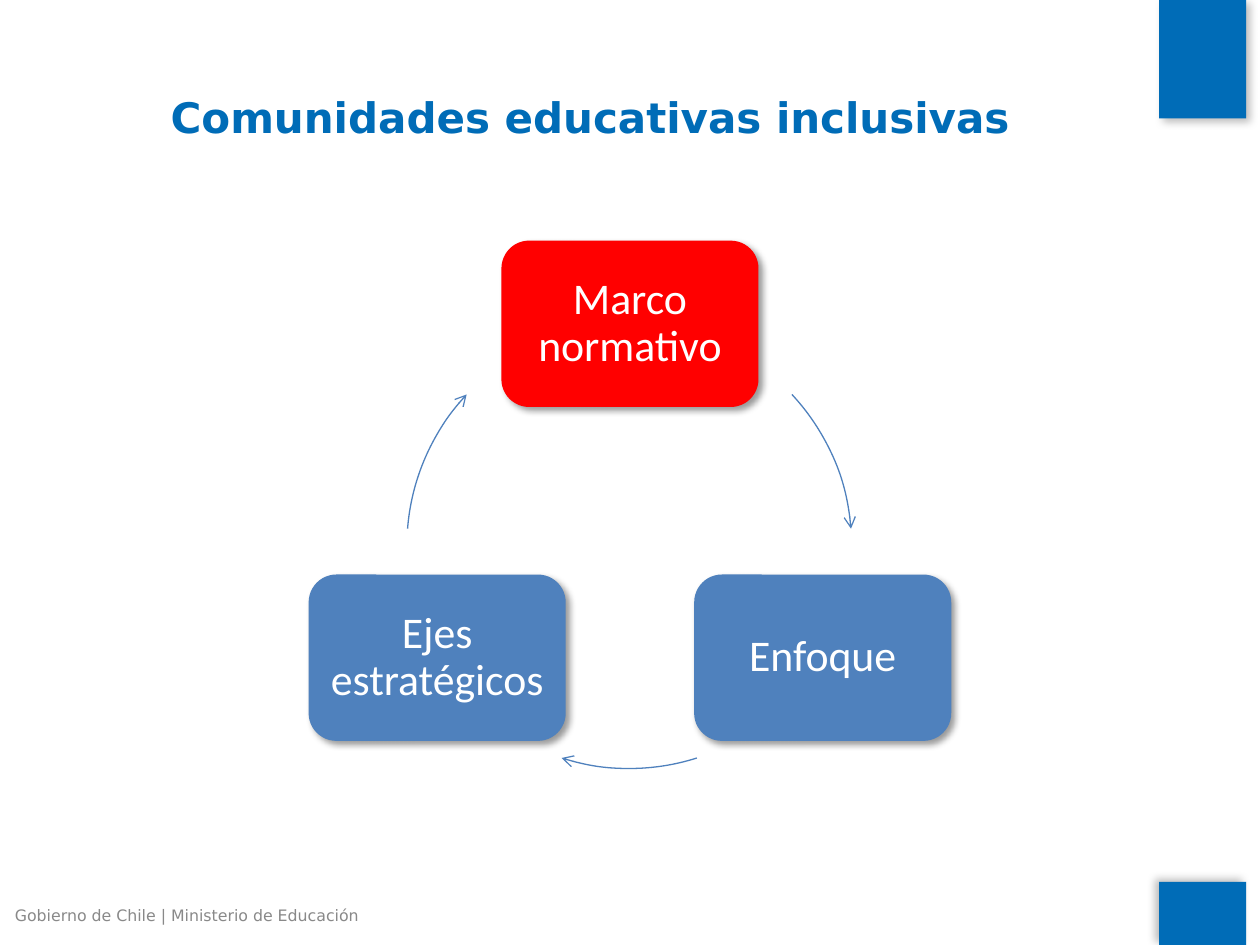
from lxml.etree import SubElement
from pptx import Presentation
from pptx.dml.color import RGBColor
from pptx.enum.shapes import MSO_SHAPE as Shape
from pptx.enum.text import MSO_ANCHOR as Anchor, PP_ALIGN as Align
from pptx.oxml.ns import qn
from pptx.util import Pt

PX = 9144  # 100 px to the inch
BLUE = "006CB7"
STEP_BLUE, STEP_RED = "4F81BD", "FF0000"


def px(*lengths):
    return [length * PX for length in lengths]


def color(hex_code):
    return RGBColor.from_string(hex_code)


def add_shadow(shape, alpha, blur, distance, angle):
    effects = shape._element.spPr.find(qn("a:effectLst"))
    shadow = SubElement(effects, qn("a:outerShdw"), blurRad=str(Pt(blur)),
                        dist=str(Pt(distance)), dir=str(angle * 60000),
                        algn="ctr", rotWithShape="0")
    black = SubElement(shadow, qn("a:srgbClr"), val="000000")
    SubElement(black, qn("a:alpha"), val=str(alpha * 1000))


def add_filled(page, kind, box, fill):
    shape = page.shapes.add_shape(kind, *px(*box))
    shape.shadow.inherit = False
    shape.fill.solid()
    shape.fill.fore_color.rgb = color(fill)
    shape.line.fill.background()
    return shape


def write(frame, text, font, size, hex_code, align, bold=False):
    frame.word_wrap = True
    frame.vertical_anchor = Anchor.MIDDLE
    para = frame.paragraphs[0]
    para.alignment = align
    span = para.add_run()
    span.text = text
    span.font.name = font
    span.font.size = Pt(size)
    span.font.bold = bold
    span.font.color.rgb = color(hex_code)
    return para


def add_corner_block(page, box, shadow_angle):
    block = add_filled(page, Shape.RECTANGLE, box, BLUE)
    add_shadow(block, 25, 5, 3, shadow_angle)


def add_title(page, box):
    title = page.shapes.title
    title.left, title.top, title.width, title.height = px(*box)
    write(title.text_frame, "Comunidades educativas inclusivas",
          "DejaVu Sans", 24, BLUE, Align.CENTER, bold=True)


def add_footer(page, box):
    footer = page.shapes.add_textbox(*px(*box))
    write(footer.text_frame, "Gobierno de Chile | Ministerio de Educación",
          "DejaVu Sans", 9, "898989", Align.LEFT)


def add_step(page, box, text, fill):
    step = add_filled(page, Shape.ROUNDED_RECTANGLE, box, fill)
    add_shadow(step, 40, 4, 3, 45)
    frame = step.text_frame
    frame.margin_left = frame.margin_right = 8 * PX
    frame.margin_top = frame.margin_bottom = 8 * PX
    para = write(frame, text, "Calibri", 25, "FFFFFF", Align.CENTER)
    para.line_spacing = 0.9


def add_arc_arrow(page, box, start, end):
    """Clockwise arc between two angles in degrees, measured from the right."""
    arc = page.shapes.add_shape(Shape.ARC, *px(*box))
    arc.shadow.inherit = False
    # Adjustments are in units of 100000, angles in 60000ths of a degree.
    arc.adjustments[0] = start * 0.6
    arc.adjustments[1] = end * 0.6
    arc.fill.background()
    arc.line.color.rgb = color(STEP_BLUE)
    arc.line.width = Pt(0.75)
    SubElement(arc.line._get_or_add_ln(), qn("a:tailEnd"), type="arrow")


def add_cycle(page, box):
    """Three steps, one on top and two below, joined by arcs of one circle."""
    left, top, width, height = box
    step_width, step_height = 204, 132
    right, bottom = left + width - step_width, top + height - step_height
    diameter = 353
    ring = (left + (width - diameter) // 2, top + step_height // 2,
            diameter, diameter)
    steps = (
        ("Marco normativo", STEP_RED, (left + right) // 2, top, 317, 355.5),
        ("Enfoque", STEP_BLUE, right, bottom, 72.3, 107.7),
        ("Ejes estratégicos", STEP_BLUE, left, bottom, 184.5, 223),
    )
    for text, fill, x, y, start, end in steps:
        add_step(page, (x, y, step_width, step_height), text, fill)
        add_arc_arrow(page, ring, start, end)


def main():
    deck = Presentation()
    deck.slide_width, deck.slide_height = px(1000, 750)
    page = deck.slides.add_slide(deck.slide_layouts[5])
    add_footer(page, (2, 713, 317, 27))
    add_corner_block(page, (920, 0, 69, 94), 45)
    add_corner_block(page, (920, 700, 69, 50), 215)
    add_title(page, (31, 30, 875, 125))
    add_cycle(page, (245, 191, 510, 397))
    deck.save("out.pptx")


if __name__ == "__main__":
    main()
